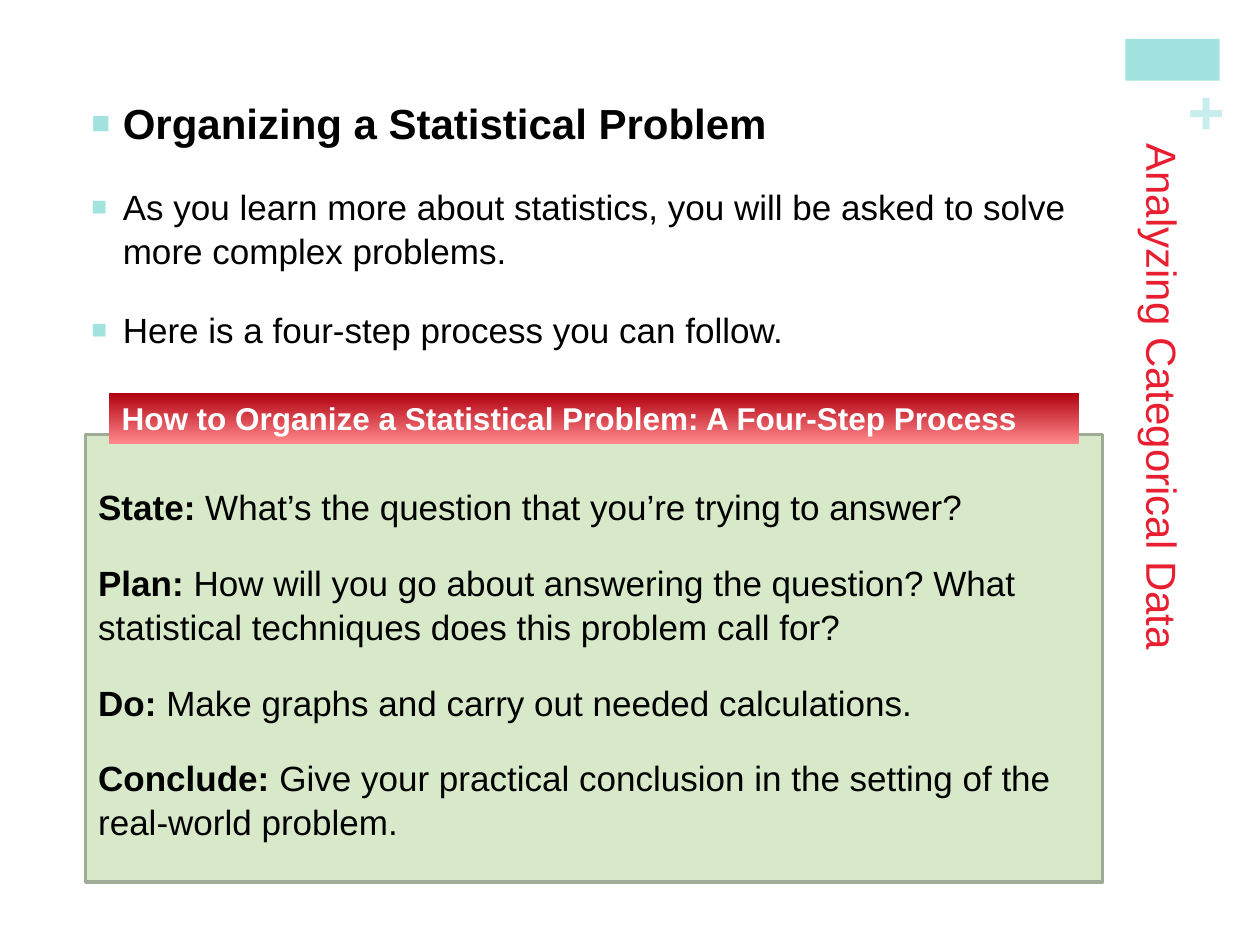
from lxml.etree import SubElement
from pptx import Presentation
from pptx.dml.color import RGBColor
from pptx.enum.shapes import MSO_SHAPE
from pptx.enum.text import MSO_ANCHOR, PP_ALIGN
from pptx.oxml.ns import qn
from pptx.util import Pt

TEAL = RGBColor(0xA2, 0xE3, 0xDF)
PALE_TEAL = RGBColor(0xC7, 0xEE, 0xEC)
RED = RGBColor(0xE8, 0x1F, 0x30)
DARK_RED = RGBColor(0xB1, 0x00, 0x0F)
PINK = RGBColor(0xFF, 0x88, 0x8B)
PALE_GREEN = RGBColor(0xD7, 0xE9, 0xC9)
GREY_GREEN = RGBColor(0x9F, 0xAC, 0x95)
BLACK = RGBColor(0, 0, 0)
WHITE = RGBColor(0xFF, 0xFF, 0xFF)

INTRO = [
    ("Organizing a Statistical Problem", 24, True),
    ("As you learn more about statistics, you will be asked to solve "
     "more complex problems.", 20, False),
    ("Here is a four-step process you can follow.", 20, False),
]
STEPS = [
    ("State:", "What’s the question that you’re trying to answer?"),
    ("Plan:", "How will you go about answering the question? What statistical "
              "techniques does this problem call for?"),
    ("Do:", "Make graphs and carry out needed calculations."),
    ("Conclude:", "Give your practical conclusion in the setting of the "
                  "real-world problem."),
]


def add_run(p, text, size=20, color=BLACK, bold=False):
    r = p.add_run()
    r.text = text
    r.font.name = "Arial"
    r.font.size = Pt(size)
    r.font.bold = bold
    r.font.color.rgb = color


def set_frame(tf, insets=(7.2, 3.6, 7.2, 3.6), anchor=MSO_ANCHOR.TOP, wrap=True):
    tf.margin_left, tf.margin_top, tf.margin_right, tf.margin_bottom = map(Pt, insets)
    tf.vertical_anchor = anchor
    tf.word_wrap = wrap


def next_paragraph(tf, first, before=0, after=0):
    p = tf.paragraphs[0] if first else tf.add_paragraph()
    p.alignment = PP_ALIGN.LEFT
    p.line_spacing = 1.05
    p.space_before, p.space_after = Pt(before), Pt(after)
    return p


def add_bullet(p, indent=18):
    pPr = p._p.get_or_add_pPr()
    pPr.set("marL", str(Pt(indent)))
    pPr.set("indent", str(-Pt(indent)))
    color = SubElement(pPr, qn("a:buClr"))
    SubElement(color, qn("a:srgbClr"), val=str(TEAL))
    SubElement(pPr, qn("a:buSzPct"), val="75000")
    SubElement(pPr, qn("a:buFont"), typeface="Arial")
    SubElement(pPr, qn("a:buChar"), char="■")


def add_box(s, box):
    sp = s.shapes.add_shape(MSO_SHAPE.RECTANGLE, *map(Pt, box))
    sp.shadow.inherit = False
    sp.line.fill.background()
    sp.fill.solid()
    return sp


def add_corner(s, box):
    # Teal block with the plus sign beneath its right end
    add_box(s, box).fill.fore_color.rgb = TEAL
    x, y, w, h = box
    plus_w, plus_h = 20.2, 43.9
    sp = s.shapes.add_textbox(Pt(x + w - plus_w), Pt(y + 21.6), Pt(plus_w), Pt(plus_h))
    sp.rotation = 270
    set_frame(sp.text_frame, (0, 0, 0, 0), MSO_ANCHOR.BOTTOM, wrap=False)
    p = sp.text_frame.paragraphs[0]
    p.alignment = PP_ALIGN.CENTER
    add_run(p, "+", size=36, color=PALE_TEAL, bold=True)


def add_side_title(s, box):
    tf = s.shapes.add_textbox(*map(Pt, box)).text_frame
    set_frame(tf)
    tf._txBody.bodyPr.set("vert", "eaVert")
    add_run(tf.paragraphs[0], "Analyzing Categorical Data", size=24, color=RED)


def add_intro(s, box):
    tf = s.shapes.add_textbox(*map(Pt, box)).text_frame
    set_frame(tf, (3.6, 8, 3.6, 3.6))
    for i, (text, size, bold) in enumerate(INTRO):
        p = next_paragraph(tf, i == 0, before=20 if i else 0)
        add_bullet(p)
        add_run(p, text, size=size, bold=bold)


def add_steps(s, box):
    # Green panel
    x, y, w, h = box
    panel = add_box(s, box)
    panel.fill.fore_color.rgb = PALE_GREEN
    panel.line.color.rgb = GREY_GREEN
    panel.line.width = Pt(2)
    tf = panel.text_frame
    set_frame(tf, (7.2, 28, 7.2, 3.6))
    for i, (step, text) in enumerate(STEPS):
        p = next_paragraph(tf, i == 0, after=18 if i < len(STEPS) - 1 else 0)
        add_run(p, step, bold=True)
        add_run(p, " " + text)

    # Red heading overlapping the panel's top edge
    inset = 13.4
    head = add_box(s, (x + inset, y - 23.8, w - 2 * inset, 28.8))
    head.fill.gradient()
    head.fill.gradient_angle = 270
    for stop, color, position in zip(head.fill.gradient_stops, (DARK_RED, PINK), (0, 1)):
        stop.color.rgb = color
        stop.position = position
    set_frame(head.text_frame, anchor=MSO_ANCHOR.MIDDLE)
    p = head.text_frame.paragraphs[0]
    p.alignment = PP_ALIGN.LEFT
    add_run(p, "How to Organize a Statistical Problem: A Four-Step Process",
            size=18, color=WHITE, bold=True)


def main():
    prs = Presentation()
    prs.slide_width, prs.slide_height = Pt(720), Pt(540)
    s = prs.slides.add_slide(prs.slide_layouts[6])
    add_corner(s, (643, 22.3, 54, 23.8))
    add_side_title(s, (629.3, 74.9, 53.3, 407.5))
    add_intro(s, (48.6, 46.4, 581, 171.4))
    add_steps(s, (49, 248.4, 581, 255.6))
    prs.save("out.pptx")


if __name__ == "__main__":
    main()
